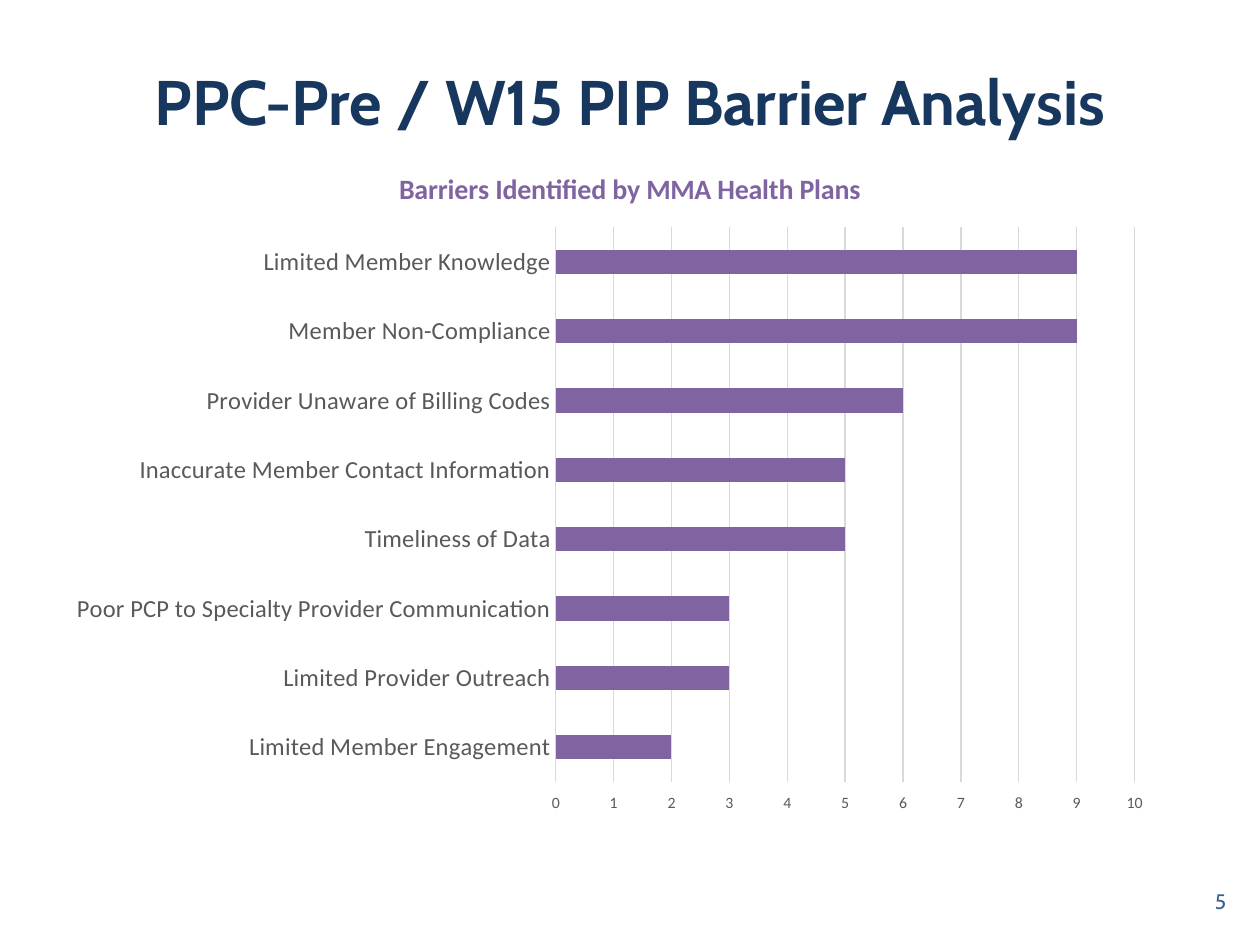
import pptx
import pptx.chart.data
import pptx.dml.color
import pptx.enum.chart
import pptx.enum.text
import pptx.util
from pptx.util import Cm

# Content
TITLE = "PPC-Pre / W15 PIP Barrier Analysis"
PAGE_NUMBER = "5"
CHART_TITLE = "Barriers Identified by MMA Health Plans"
BARRIERS = [
    ("Limited Member Knowledge", 9),
    ("Member Non-Compliance", 9),
    ("Provider Unaware of Billing Codes", 6),
    ("Inaccurate Member Contact Information", 5),
    ("Timeliness of Data", 5),
    ("Poor PCP to Specialty Provider Communication", 3),
    ("Limited Provider Outreach", 3),
    ("Limited Member Engagement", 2),
]
PLOT_PLACE = {"layoutTarget": "inner", "xMode": "edge", "yMode": "edge",
              "x": 0.445, "y": 0.104, "w": 0.501, "h": 0.831}
HEADING_PLACE = {"xMode": "edge", "yMode": "edge", "x": 0.305, "y": 0.01}
NAVY, BLUE, PURPLE = "17375E", "376092", "8064A2"
GREY, PALE_GREY = "595959", "D9D9D9"


def color(hex_code):
    return pptx.dml.color.RGBColor.from_string(hex_code)


def style_font(font, name, size, hex_code, bold=False):
    font.name = name
    font.size = pptx.util.Pt(size)
    font.color.rgb = color(hex_code)
    font.bold = bold


def style_line(line, hex_code):
    line.color.rgb = color(hex_code)
    line.width = pptx.util.Pt(0.75)


def fill_text(frame, text, align, size, hex_code, bold=False):
    frame.text = text
    frame.word_wrap = True
    frame.vertical_anchor = pptx.enum.text.MSO_ANCHOR.MIDDLE
    frame.paragraphs[0].alignment = align
    style_font(frame.paragraphs[0].runs[0].font, "Cabin", size, hex_code, bold)


def place_in_chart(part, settings, index):
    """Fix the place of a chart part, in fractions of the chart."""
    entries = "".join(f'<c:{key} val="{value}"/>' for key, value in settings.items())
    layout = pptx.oxml.parse_xml(
        '<c:layout xmlns:c="http://schemas.openxmlformats.org/drawingml/2006/chart">'
        f"<c:manualLayout>{entries}</c:manualLayout></c:layout>")
    for automatic in part.findall(layout.tag):
        part.remove(automatic)
    part.insert(index, layout)


def add_barrier_chart(slide):
    chart_enum = pptx.enum.chart
    data = pptx.chart.data.CategoryChartData()
    data.categories = [barrier for barrier, _ in BARRIERS]
    data.add_series("Series 1", [plans for _, plans in BARRIERS])
    chart = slide.shapes.add_chart(
        chart_enum.XL_CHART_TYPE.BAR_CLUSTERED,
        Cm(0.84), Cm(3.18), Cm(23.29), Cm(13.46), data).chart
    style_font(chart.font, "Calibri", 10, "000000")
    chart.has_legend = False

    # Heading
    chart.has_title = True
    heading = chart.chart_title.text_frame
    heading.text = CHART_TITLE
    style_font(heading.paragraphs[0].runs[0].font, "Calibri", 16, PURPLE, True)
    chart.chart_title.include_in_layout = False

    # Bars
    plot = chart.plots[0]
    plot.gap_width = 182
    plot.vary_by_categories = False
    bars = plot.series[0].format.fill
    bars.solid()
    bars.fore_color.rgb = color(PURPLE)

    # Axes: first barrier on top, scale along the bottom
    barrier_axis, count_axis = chart.category_axis, chart.value_axis
    for axis, size in ((barrier_axis, 14), (count_axis, 9)):
        axis.major_tick_mark = chart_enum.XL_TICK_MARK.NONE
        axis.minor_tick_mark = chart_enum.XL_TICK_MARK.NONE
        style_font(axis.tick_labels.font, "Calibri", size, GREY)
    barrier_axis.reverse_order = True
    style_line(barrier_axis.format.line, PALE_GREY)
    count_axis.tick_label_position = chart_enum.XL_TICK_LABEL_POSITION.HIGH
    count_axis.minimum_scale, count_axis.maximum_scale = 0, 10
    count_axis.major_unit = 1
    count_axis.format.line.fill.background()
    count_axis.has_major_gridlines = True
    style_line(count_axis.major_gridlines.format.line, PALE_GREY)

    # Fixed places of plot and heading
    chart_root = chart.element.chart
    place_in_chart(chart_root.plotArea, PLOT_PLACE, 0)
    place_in_chart(chart_root.title, HEADING_PLACE, 1)


def main():
    deck = pptx.Presentation()
    deck.slide_width, deck.slide_height = Cm(25.4), Cm(19.05)
    slide = deck.slides.add_slide(deck.slide_layouts[5])
    align = pptx.enum.text.PP_ALIGN

    # Title
    title = slide.shapes.title
    title.left, title.top, title.width, title.height = (
        Cm(1.27), Cm(0.43), Cm(22.86), Cm(3.18))
    fill_text(title.text_frame, TITLE, align.CENTER, 36, NAVY, True)

    # Page number
    page = slide.shapes.add_textbox(Cm(19.05), Cm(17.65), Cm(5.92), Cm(1.02))
    fill_text(page.text_frame, PAGE_NUMBER, align.RIGHT, 12, BLUE)

    add_barrier_chart(slide)
    deck.save("out.pptx")


if __name__ == "__main__":
    main()
